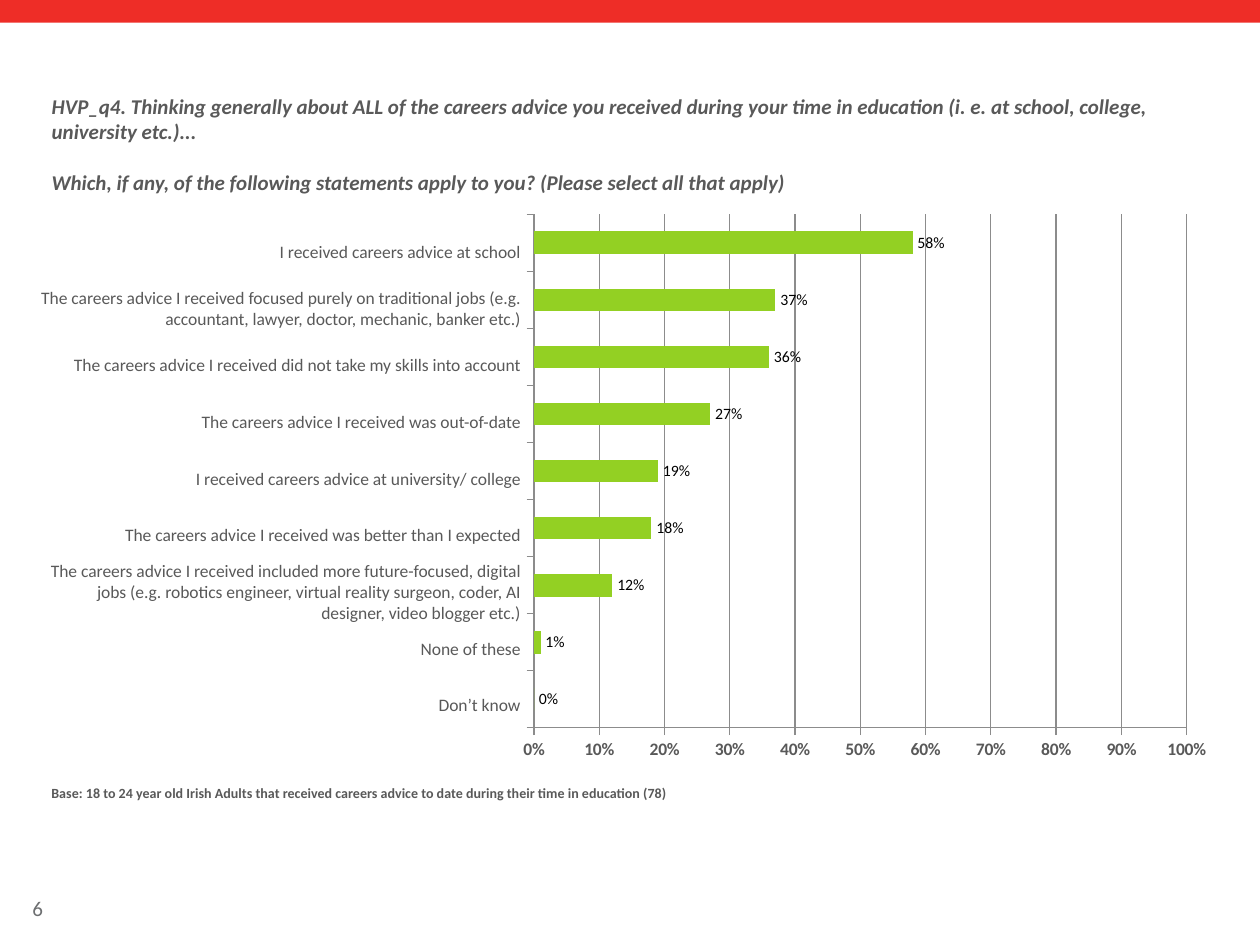
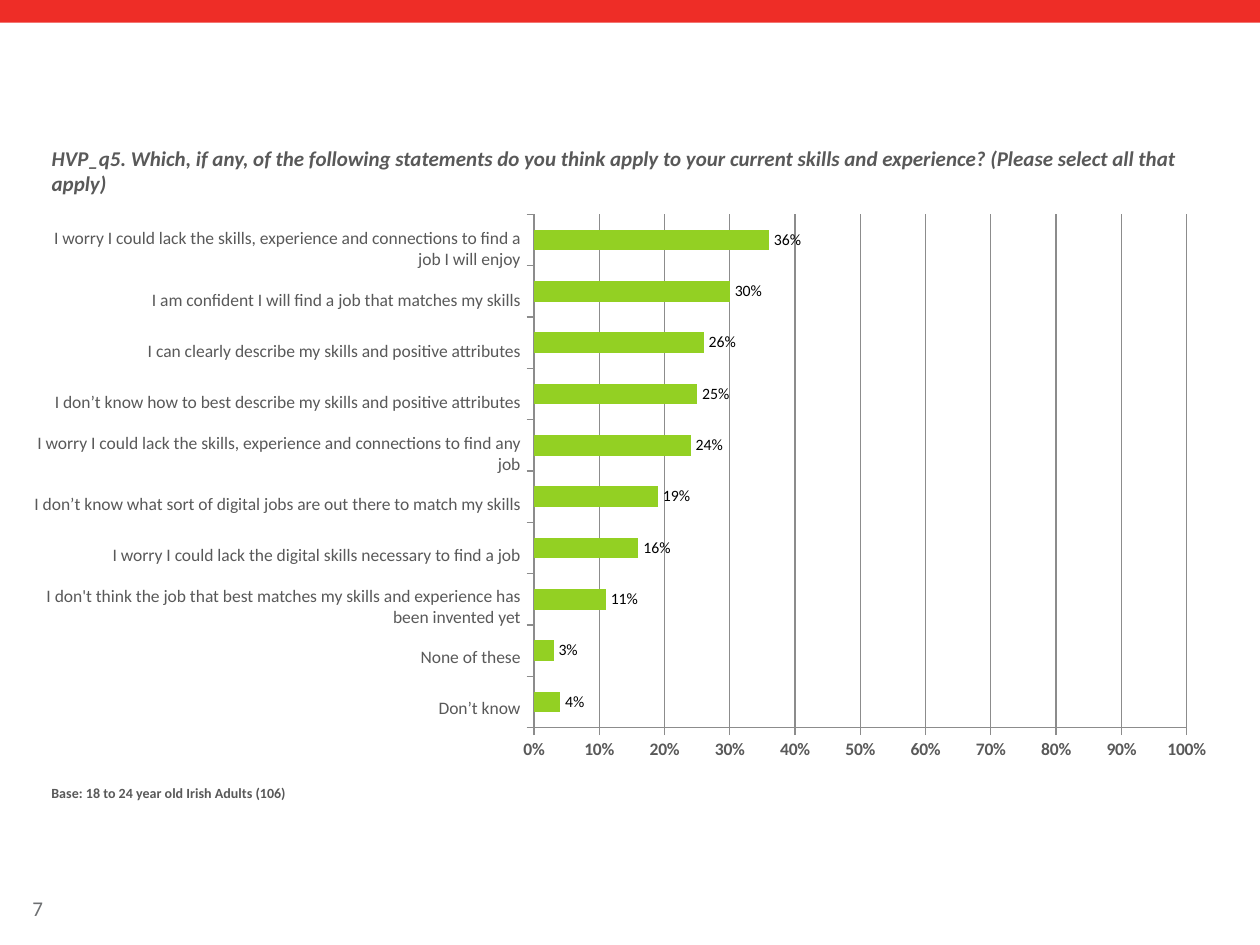
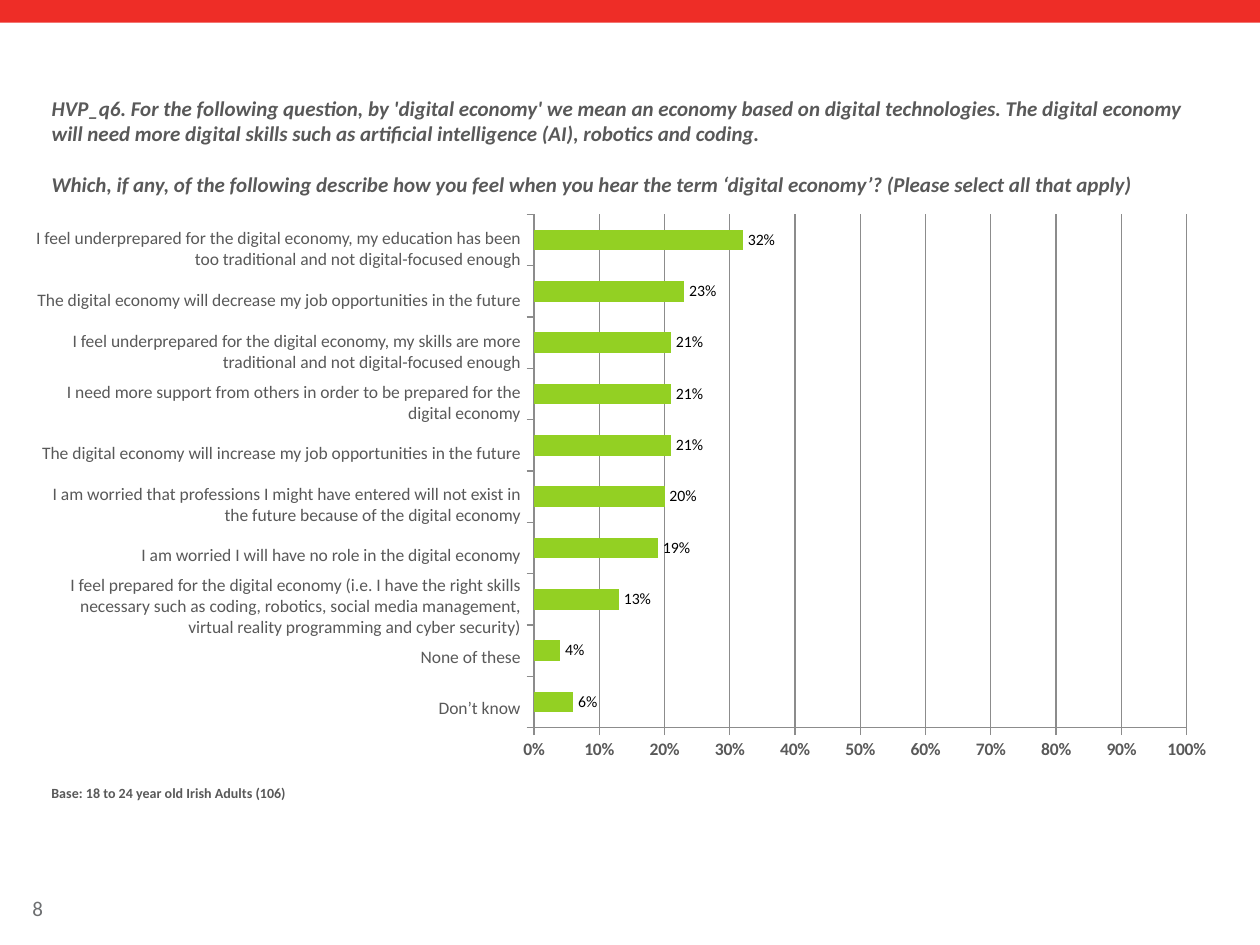
from lxml.etree import SubElement
from pptx import Presentation
from pptx.chart.data import CategoryChartData
from pptx.dml.color import RGBColor
from pptx.enum.chart import (XL_CHART_TYPE, XL_LABEL_POSITION,
                             XL_TICK_LABEL_POSITION, XL_TICK_MARK)
from pptx.enum.shapes import MSO_SHAPE
from pptx.enum.text import MSO_ANCHOR, MSO_AUTO_SIZE, PP_ALIGN
from pptx.oxml.ns import qn
from pptx.util import Pt

# Shared style
RED, GREEN, BLACK = "EE2D27", "93D023", "000000"
TEXT, MUTED, RULE = "595959", "6D6F71", "8C8C8C"
FONT, CHART_FONT = "Calibri", "Manrope"
WIDTH, HEIGHT = 720, 540
TEXT_LEFT, TEXT_WIDTH = 22.3, 676
TITLE_BOTTOM = 116.4
LABELS_TOP, LABELS_HEIGHT = 127.4, 291.6


def color(value):
    return RGBColor.from_string(value)


class SurveyDeck:
    """Holds the survey style and the page being drawn."""

    def __init__(self):
        self.deck = Presentation()
        self.deck.slide_width, self.deck.slide_height = Pt(WIDTH), Pt(HEIGHT)
        self.page = None

    def new_page(self, number):
        self.page = self.deck.slides.add_slide(self.deck.slide_layouts[5])
        self.band()
        self.text(str(number), (11.5, 508.3, 55.4, 21.6), size=12, shade=MUTED,
                  anchor=MSO_ANCHOR.MIDDLE)

    def band(self):
        bar = self.page.shapes.add_shape(MSO_SHAPE.RECTANGLE, 0, 0, Pt(WIDTH), Pt(13))
        bar.shadow.inherit = False
        bar.fill.solid()
        bar.fill.fore_color.rgb = color(RED)
        bar.line.fill.background()

    def style(self, font, size, shade=TEXT, bold=False, italic=False, name=FONT):
        font.name, font.size = name, Pt(size)
        font.bold, font.italic = bold, italic
        font.color.rgb = color(shade)

    def frame(self, box, anchor):
        frame = box.text_frame
        frame.word_wrap = True
        frame.auto_size = MSO_AUTO_SIZE.NONE
        frame.vertical_anchor = anchor
        frame.margin_left = frame.margin_right = Pt(7.2)
        frame.margin_top = frame.margin_bottom = Pt(3.6)
        return frame

    def span(self, para, words, align, **look):
        para.alignment = align
        span = para.add_run()
        span.text = words
        self.style(span.font, **look)

    def text(self, words, area, align=PP_ALIGN.LEFT, anchor=MSO_ANCHOR.TOP, **look):
        box = self.page.shapes.add_textbox(*map(Pt, area))
        self.span(self.frame(box, anchor).paragraphs[0], words, align, **look)

    def title(self, top, questions):
        box = self.page.shapes.title
        box.left, box.top = Pt(TEXT_LEFT), Pt(top)
        box.width, box.height = Pt(TEXT_WIDTH), Pt(TITLE_BOTTOM - top)
        frame = self.frame(box, MSO_ANCHOR.TOP)
        for index, question in enumerate(questions):
            para = frame.add_paragraph() if index else frame.paragraphs[0]
            para.space_before = Pt(14.5 if index else 0)
            self.span(para, question, PP_ALIGN.LEFT, size=12, bold=True, italic=True)

    def labels(self, names):
        step = LABELS_HEIGHT / len(names)
        for index, name in enumerate(names):
            self.text(name, (11.5, LABELS_TOP + index * step, 293, step),
                      PP_ALIGN.RIGHT, MSO_ANCHOR.MIDDLE, size=10)

    def bar_chart(self, percents):
        # Bars run upwards, so the last answer comes first
        data = CategoryChartData(number_format="0%")
        data.categories = [str(index + 1) for index in range(len(percents))]
        data.add_series("Series 1", [percent / 100 for percent in reversed(percents)])
        chart = self.page.shapes.add_chart(
            XL_CHART_TYPE.BAR_CLUSTERED, Pt(293), Pt(116), Pt(405.4), Pt(326), data).chart
        chart.has_legend = chart.has_title = False
        self.style(chart.font, 18, MUTED, name=CHART_FONT)

        # Bars and their values
        plot = chart.plots[0]
        plot.gap_width, plot.overlap, plot.vary_by_categories = 150, -10, False
        fill = plot.series[0].format.fill
        fill.solid()
        fill.fore_color.rgb = color(GREEN)
        plot.has_data_labels = True
        values = plot.data_labels
        values.show_value = True
        values.position = XL_LABEL_POSITION.OUTSIDE_END
        values.number_format, values.number_format_is_linked = "0%", False
        self.style(values.font, 9, BLACK)

        # Axes
        answers, scale = chart.category_axis, chart.value_axis
        answers.tick_label_position = XL_TICK_LABEL_POSITION.NONE
        answers.has_major_gridlines = False
        scale.tick_label_position = XL_TICK_LABEL_POSITION.LOW
        scale.minimum_scale, scale.maximum_scale, scale.major_unit = 0, 1, 0.1
        scale.has_major_gridlines = True
        scale.tick_labels.number_format = "0%"
        scale.tick_labels.number_format_is_linked = False
        for axis in (answers, scale):
            axis.major_tick_mark = XL_TICK_MARK.OUTSIDE
            axis.minor_tick_mark = XL_TICK_MARK.NONE
            self.style(axis.tick_labels.font, 10, bold=axis is scale)
        for part in (answers, scale, scale.major_gridlines):
            part.format.line.color.rgb = color(RULE)
            part.format.line.width = Pt(0.75)
        self.place_plot(chart)

    def place_plot(self, chart):
        area = chart.element.find(".//" + qn("c:plotArea"))
        layout = area.find(qn("c:layout"))
        if layout is None:
            layout = SubElement(area, qn("c:layout"))
            area.insert(0, layout)
        manual = SubElement(layout, qn("c:manualLayout"))
        for tag, value in (("layoutTarget", "inner"), ("xMode", "edge"), ("yMode", "edge"),
                           ("x", 0.03), ("y", 0.02), ("w", 0.92), ("h", 0.9)):
            SubElement(manual, qn("c:" + tag)).set("val", str(value))

    def question_page(self, number, top, questions, base, answers):
        self.new_page(number)
        self.title(top, questions)
        self.bar_chart([percent for _, percent in answers])
        self.labels([name for name, _ in answers])
        self.text(base, (TEXT_LEFT, 445, TEXT_WIDTH, 31), size=8, bold=True)


ALL_ADULTS = "Base: 18 to 24 year old Irish Adults (106)"


def main():
    survey = SurveyDeck()

    # Careers advice
    survey.question_page(
        6, 49.7,
        ["HVP_q4. Thinking generally about ALL of the careers advice you received during "
         "your time in education (i. e. at school, college, university etc.)...",
         "Which, if any, of the following statements apply to you? "
         "(Please select all that apply)"],
        "Base: 18 to 24 year old Irish Adults that received careers advice to date "
        "during their time in education (78)",
        [("I received careers advice at school", 58),
         ("The careers advice I received focused purely on traditional jobs "
          "(e.g. accountant, lawyer, doctor, mechanic, banker etc.)", 37),
         ("The careers advice I received did not take my skills into account", 36),
         ("The careers advice I received was out-of-date", 27),
         ("I received careers advice at university/ college", 19),
         ("The careers advice I received was better than I expected", 18),
         ("The careers advice I received included more future-focused, digital jobs "
          "(e.g. robotics engineer, virtual reality surgeon, coder, AI designer, "
          "video blogger etc.)", 12),
         ("None of these", 1),
         ("Don’t know", 0)])

    # Skills and experience
    survey.question_page(
        7, 79.4,
        ["HVP_q5. Which, if any, of the following statements do you think apply to your "
         "current skills and experience? (Please select all that apply)"],
        ALL_ADULTS,
        [("I worry I could lack the skills, experience and connections to find a job "
          "I will enjoy", 36),
         ("I am confident I will find a job that matches my skills", 30),
         ("I can clearly describe my skills and positive attributes", 26),
         ("I don’t know how to best describe my skills and positive attributes", 25),
         ("I worry I could lack the skills, experience and connections to find any job", 24),
         ("I don’t know what sort of digital jobs are out there to match my skills", 19),
         ("I worry I could lack the digital skills necessary to find a job", 16),
         ("I don't think the job that best matches my skills and experience has been "
          "invented yet", 11),
         ("None of these", 3),
         ("Don’t know", 4)])

    # Digital economy
    survey.question_page(
        8, 51,
        ["HVP_q6. For the following question, by 'digital economy' we mean an economy based "
         "on digital technologies. The digital economy will need more digital skills such as "
         "artificial intelligence (AI), robotics and coding.",
         "Which, if any, of the following describe how you feel when you hear the term "
         "‘digital economy’? (Please select all that apply)"],
        ALL_ADULTS,
        [("I feel underprepared for the digital economy, my education has been too "
          "traditional and not digital-focused enough", 32),
         ("The digital economy will decrease my job opportunities in the future", 23),
         ("I feel underprepared for the digital economy, my skills are more traditional "
          "and not digital-focused enough", 21),
         ("I need more support from others in order to be prepared for the digital "
          "economy", 21),
         ("The digital economy will increase my job opportunities in the future", 21),
         ("I am worried that professions I might have entered will not exist in the "
          "future because of the digital economy", 20),
         ("I am worried I will have no role in the digital economy", 19),
         ("I feel prepared for the digital economy (i.e. I have the right skills necessary "
          "such as coding, robotics, social media management, virtual reality programming "
          "and cyber security)", 13),
         ("None of these", 4),
         ("Don’t know", 6)])

    survey.deck.save("out.pptx")


if __name__ == "__main__":
    main()
